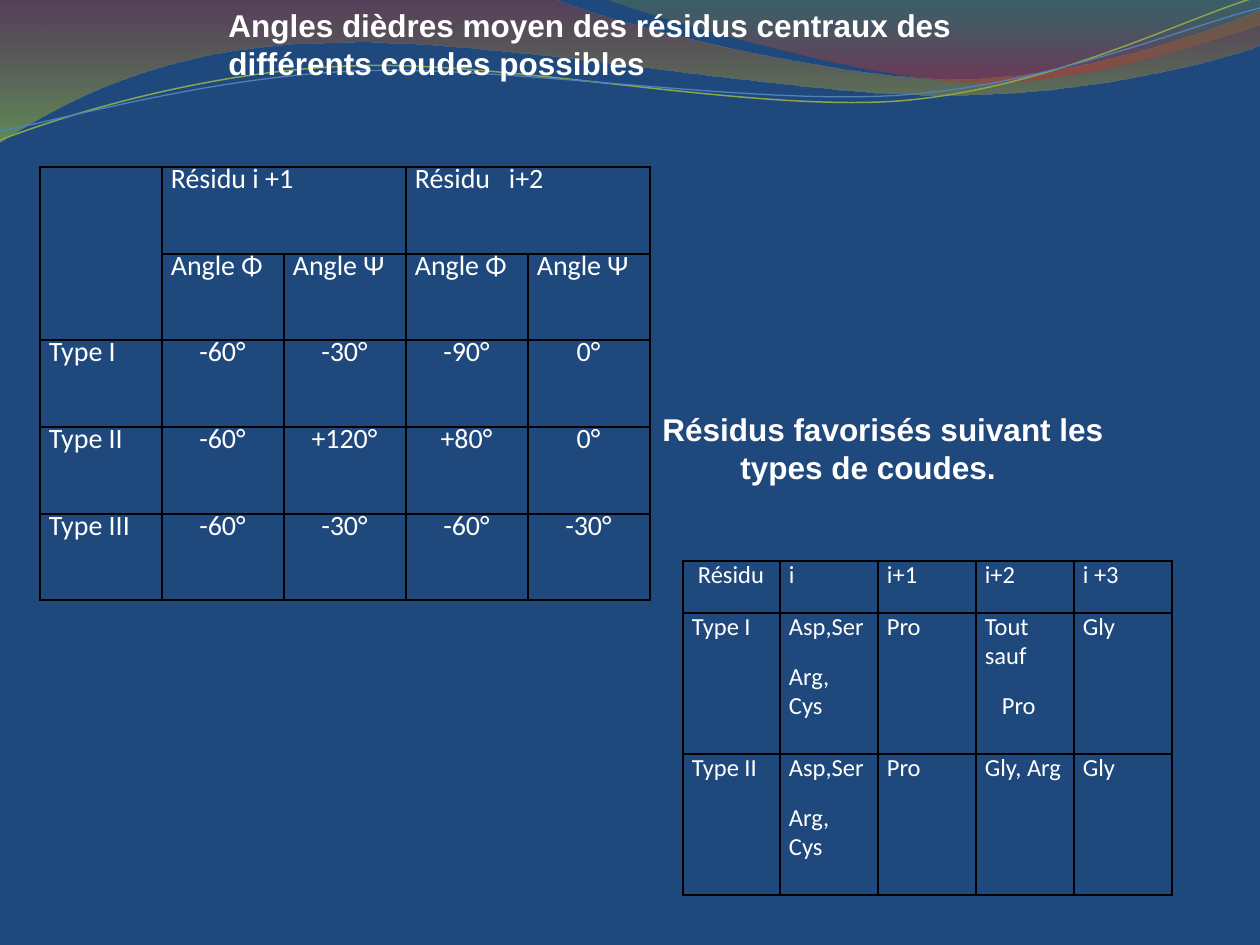
from lxml import etree
from pptx import Presentation
from pptx import util as u
from pptx.dml.color import RGBColor
from pptx.enum import text
from pptx.oxml import ns

PX = 7257
LEFT, MID = text.PP_ALIGN.LEFT, text.PP_ALIGN.CENTER
hue = RGBColor.from_string


def write(para, words, size, font, bold=False, indent=0):
    run = para.add_run()
    run.text = words
    run.font.size = u.Pt(size)
    run.font.name = font
    run.font.bold = bold
    run.font.color.rgb = hue("FFFFFF")
    if indent:
        para._p.get_or_add_pPr().set("marL", str(indent * PX))


deck = Presentation()
deck.slide_width, deck.slide_height = 1260 * PX, 945 * PX
slide = deck.slides.add_slide(deck.slide_layouts[6])
slide.background.fill.solid()
slide.background.fill.fore_color.rgb = hue("1F497D")

waves = [
    ((0, 0), [
        [(554, -1)],
        [(600, 21), (837, 79), (955, 79)],
        [(1075, 79), (1207, 33), (1260, 11)],
        [(1261, 45)],
        [(1239, 55), (1096, 96), (940, 95)],
        [(784, 95), (481, 35), (324, 43)],
        [(163, 45), (58, 105), (-1, 142)],
        [(0, 0)],
    ], [(0, "973330", 45), (1, "95C238", 55)], None),
    ((604, -1), [
        [(641, 14), (859, 78), (969, 82)],
        [(1079, 87), (1211, 40), (1260, 26)],
        [(1260, 0)],
        [(604, -1)],
    ], [(0, "769537", 30), (0.8, "BE3330", 45)], None),
    ((0, 140), [
        [(60, 117), (199, 72), (349, 66)],
        [(498, 59), (747, 112), (898, 101)],
        [(1050, 89), (1182, 19), (1257, -3)],
    ], None, ("89A54F", 0.85)),
    ((0, 131), [
        [(59, 121), (207, 77), (357, 71)],
        [(508, 65), (752, 106), (903, 95)],
        [(1053, 84), (1187, 26), (1260, 8)],
    ], None, ("4F81BD", 0.75)),
]
for start, parts, stops, line in waves:
    pen = slide.shapes.build_freeform(*start, scale=PX)
    pen.add_line_segments([dot for part in parts for dot in part], close=bool(stops))
    wave = pen.convert_to_shape()
    wave.shadow.inherit = False
    legs = iter(list(wave._element.spPr.iter(ns.qn("a:lnTo"))))
    for part in parts:
        group = [next(legs) for dot in part]
        if len(group) == 3:
            curve = etree.Element(ns.qn("a:cubicBezTo"))
            group[0].addprevious(curve)
            for leg in group:
                curve.append(leg[0])
                leg.getparent().remove(leg)
    if stops:
        wave.line.fill.background()
        wave.fill.gradient()
        wave.fill.gradient_angle = 270
        for stop, (place, tone, alpha) in zip(wave.fill.gradient_stops, stops):
            stop.position = place
            stop.color.rgb = hue(tone)
        tones = wave._element.spPr.iter(ns.qn("a:srgbClr"))
        for node, (place, tone, alpha) in zip(list(tones), stops):
            etree.SubElement(node, ns.qn("a:alpha")).set("val", str(alpha * 1000))
    else:
        wave.fill.background()
        wave.line.color.rgb = hue(line[0])
        wave.line.width = u.Pt(line[1])

heads = [
    ((216, 0, 787, 89),
     [("Angles dièdres moyen des résidus centraux des différents coudes possibles", 0)]),
    ((650, 404, 630, 89),
     [("Résidus favorisés suivant les", 0), ("types de coudes.", 78)]),
]
for box, rows in heads:
    frame = slide.shapes.add_textbox(*(n * PX for n in box)).text_frame
    frame.word_wrap = True
    for at, (words, indent) in enumerate(rows):
        para = frame.add_paragraph() if at else frame.paragraphs[0]
        write(para, words, 18, "Arial", True, indent)

angles = [
    ["", "Résidu i +1", "", "Résidu\ti+2", ""],
    ["", "Angle Φ", "Angle Ψ", "Angle Φ", "Angle Ψ"],
    ["Type I", "-60°", "-30°", "-90°", "0°"],
    ["Type II", "-60°", "+120°", "+80°", "0°"],
    ["Type III", "-60°", "-30°", "-60°", "-30°"],
]
turns = [
    ["Résidu", "i", "i+1", "i+2", "i +3"],
    ["Type I", "Asp,Ser\nArg, Cys", "Pro", "Tout sauf\nPro", "Gly"],
    ["Type II", "Asp,Ser\nArg, Cys", "Pro", "Gly, Arg", "Gly"],
]
joins = [((0, 0), (1, 0)), ((0, 1), (0, 2)), ((0, 3), (0, 4))]
grids = [
    (angles, 40, 167, [122] * 5, [87, 86, 87, 87, 86], 16, joins),
    (turns, 683, 561, [97] + [98] * 4, [52, 141, 141], 14, []),
]
for data, left, top, wides, highs, size, spans in grids:
    grid = slide.shapes.add_table(
        len(data), 5, left * PX, top * PX, sum(wides) * PX, sum(highs) * PX).table
    grid.first_row = grid.horz_banding = False
    for col, wide in zip(grid.columns, wides):
        col.width = wide * PX
    for row, high in zip(grid.rows, highs):
        row.height = high * PX
    for first, last in spans:
        grid.cell(*first).merge(grid.cell(*last))
    for r, row in enumerate(data):
        for c, words in enumerate(row):
            cell = grid.cell(r, c)
            cell.margin_left, cell.margin_right = 9 * PX, 10 * PX
            cell.margin_top = cell.margin_bottom = 0
            for side in ("lnL", "lnR", "lnT", "lnB"):
                edge = etree.SubElement(cell._tc.get_or_add_tcPr(), ns.qn("a:" + side), w="12700")
                ink = etree.SubElement(edge, ns.qn("a:solidFill"))
                etree.SubElement(ink, ns.qn("a:srgbClr"), val="000000")
            cell.fill.background()
            if not words:
                continue
            for at, part in enumerate(words.split("\n")):
                para = cell.text_frame.add_paragraph() if at else cell.text_frame.paragraphs[0]
                mid = "°" in part or part == "Résidu"
                para.alignment = MID if mid else LEFT
                para.line_spacing = u.Pt(16.5)
                para.space_before = para.space_after = u.Pt(6)
                if "\t" in part:
                    tabs = etree.SubElement(para._p.get_or_add_pPr(), ns.qn("a:tabLst"))
                    etree.SubElement(tabs, ns.qn("a:tab"), pos=str(94 * PX), algn="l")
                write(para, part, size, "Calibri", indent=17 if at and part == "Pro" else 0)

deck.save("out.pptx")
